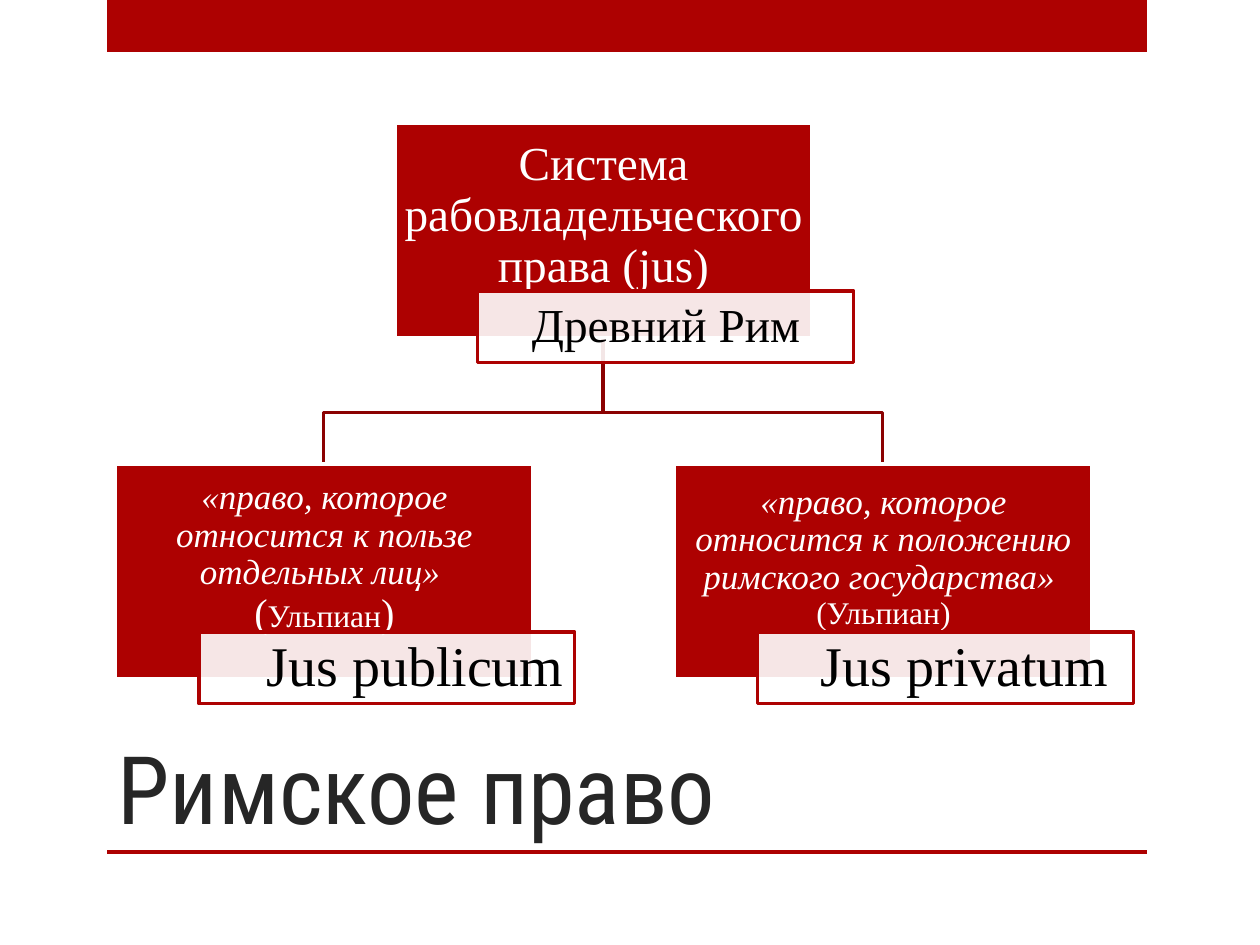
import pptx
import pptx.util
import pptx.dml.color
import pptx.enum.shapes
import pptx.enum.text
import pptx.oxml
import pptx.oxml.ns

SCALE = 914400 / 126
RED = pptx.dml.color.RGBColor(0xAD, 0x01, 0x01)
DARK_RED = pptx.dml.color.RGBColor(0x8B, 0x01, 0x01)
WHITE = pptx.dml.color.RGBColor(0xFF, 0xFF, 0xFF)
BLACK = pptx.dml.color.RGBColor(0, 0, 0)
GRAY = pptx.dml.color.RGBColor(0x26, 0x26, 0x26)
SERIF = "Times New Roman"
CENTER = pptx.enum.text.PP_ALIGN.CENTER
RIGHT = pptx.enum.text.PP_ALIGN.RIGHT
BOX_WIDTH, BOX_HEIGHT = 417, 215
LABEL_WIDTH, LABEL_HEIGHT = 376, 72
LABEL_SHIFT, LABEL_DROP = 83, 168


def px(length):
    return pptx.util.Emu(round(length * SCALE))


def add_rectangle(page, left, top, width, height, fill, line=None):
    box = page.shapes.add_shape(
        pptx.enum.shapes.MSO_SHAPE.RECTANGLE, px(left), px(top), px(width), px(height)
    )
    box.shadow.inherit = False
    box.fill.solid()
    box.fill.fore_color.rgb = fill
    if line is None:
        box.line.fill.background()
    else:
        box.line.color.rgb = line
        box.line.width = pptx.util.Pt(1.75)
    return box


def add_span(para, text, size, color, font=SERIF, italic=False):
    span = para.add_run()
    span.text = text
    span.font.name = font
    span.font.size = pptx.util.Pt(size)
    span.font.color.rgb = color
    span.font.italic = italic


def write_spans(box, spans, color, align, side, bottom):
    frame = box.text_frame
    frame.word_wrap = True
    frame.vertical_anchor = pptx.enum.text.MSO_ANCHOR.MIDDLE
    frame.margin_left = frame.margin_right = px(side)
    frame.margin_top = px(2)
    frame.margin_bottom = px(bottom)
    para = frame.paragraphs[0]
    para.alignment = align
    para.line_spacing = 0.9
    for text, size, italic in spans:
        add_span(para, text.rstrip("\n"), size, color, italic=italic)
        if text.endswith("\n"):
            para.add_line_break()


def set_opacity(box, percent):
    color = box.fill._xPr.find(".//" + pptx.oxml.ns.qn("a:srgbClr"))
    alpha = pptx.oxml.parse_xml(
        f'<a:alpha {pptx.oxml.ns.nsdecls("a")} val="{percent * 1000}"/>'
    )
    color.append(alpha)


def add_node(page, left, top, spans, label, label_size, label_align):
    box = add_rectangle(page, left, top, BOX_WIDTH, BOX_HEIGHT, RED, WHITE)
    write_spans(box, spans, WHITE, CENTER, 2, 30)
    tag = add_rectangle(
        page, left + LABEL_SHIFT, top + LABEL_DROP, LABEL_WIDTH, LABEL_HEIGHT, WHITE, RED
    )
    set_opacity(tag, 90)
    write_spans(tag, [(label, label_size, False)], BLACK, label_align, 11, 2)


def add_branch(page, parent, child):
    start = parent[0] + BOX_WIDTH // 2, parent[1] + BOX_HEIGHT
    end = child[0] + BOX_WIDTH // 2, child[1]
    bend = start[1] + 75
    points = [start, (start[0], bend), (end[0], bend), end]
    corners = [(px(x), px(y)) for x, y in points]
    builder = page.shapes.build_freeform(*corners[0])
    builder.add_line_segments(corners[1:], close=False)
    branch = builder.convert_to_shape()
    branch.shadow.inherit = False
    branch.fill.background()
    branch.line.color.rgb = DARK_RED
    branch.line.width = pptx.util.Pt(1.75)


def set_title(page, text):
    title = page.shapes.title
    title.left, title.top = px(105), px(630)
    title.width, title.height = px(935), px(220)
    frame = title.text_frame
    frame.auto_size = pptx.enum.text.MSO_AUTO_SIZE.NONE
    frame.vertical_anchor = pptx.enum.text.MSO_ANCHOR.BOTTOM
    para = frame.paragraphs[0]
    para.alignment = pptx.enum.text.PP_ALIGN.LEFT
    add_span(para, text, 54, GRAY, "Roboto Condensed")


def main():
    deck = pptx.Presentation()
    deck.slide_width, deck.slide_height = px(1260), px(945)
    page = deck.slides.add_slide(deck.slide_layouts[5])
    add_rectangle(page, 107, 0, 1040, 52, RED)
    add_rectangle(page, 107, 850, 1040, 4, RED)
    set_title(page, "Римское право")

    root, private, public = (395, 123), (116, 464), (675, 464)
    for child in (public, private):
        add_branch(page, root, child)
    add_node(page, *root, [("Система рабовладельческого права (jus)", 27, False)],
             "Древний Рим", 27, CENTER)
    add_node(page, *private, [
        ("«право, которое относится к пользе отдельных лиц» \n", 20, True),
        ("(", 23, False),
        ("Ульпиан", 18, False),
        (")", 23, False),
    ], "Jus publicum", 32, RIGHT)
    add_node(page, *public, [
        ("«право, которое относится к положению римского государства»  ", 20, True),
        ("(Ульпиан)", 18, False),
    ], "Jus privatum ", 32, RIGHT)
    deck.save("out.pptx")


if __name__ == "__main__":
    main()
